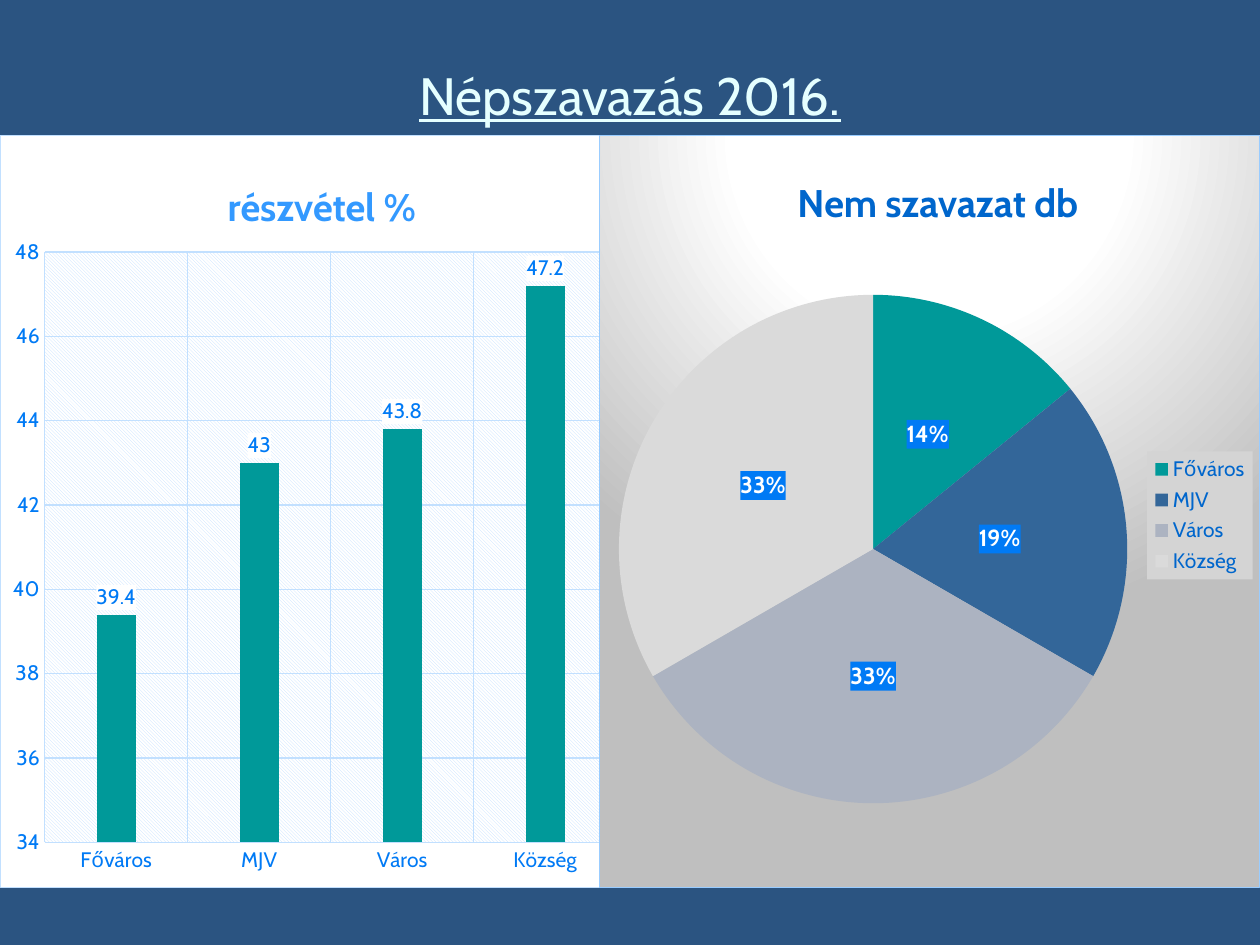
"""Build the referendum slide with a turnout column chart and a pie of No votes."""
from dataclasses import dataclass

from lxml import etree
from pptx import Presentation
from pptx.chart.chart import Chart
from pptx.chart.data import CategoryChartData
from pptx.dml.color import RGBColor
from pptx.enum.chart import XL_CHART_TYPE, XL_LABEL_POSITION, XL_LEGEND_POSITION, XL_TICK_MARK
from pptx.enum.text import MSO_ANCHOR, PP_ALIGN
from pptx.oxml import parse_xml
from pptx.oxml.ns import qn
from pptx.util import Inches, Pt

COLUMN = XL_CHART_TYPE.COLUMN_CLUSTERED
PIE = XL_CHART_TYPE.PIE
OUTSIDE_END = XL_LABEL_POSITION.OUTSIDE_END
CENTER = XL_LABEL_POSITION.CENTER
NO_TICK = XL_TICK_MARK.NONE
FONT = "Cabin"
TITLE_ONLY = 5
SETTLEMENTS = ["Főváros", "MJV", "Város", "Község"]
PALE_BLUE = "C2E0FF"
BRIGHT_BLUE = "007AF5"
SLICE_COLORS = ["009999", "336699", "ACB3C1", "DADADA"]
NAMESPACES = (
    'xmlns:c="http://schemas.openxmlformats.org/drawingml/2006/chart" '
    'xmlns:a="http://schemas.openxmlformats.org/drawingml/2006/main"'
)


def rgb(color: str) -> RGBColor:
    """Turn a hex string into a colour."""
    return RGBColor.from_string(color)


def solid(color: str) -> str:
    """Return the XML of a solid fill."""
    return f'<a:solidFill><a:srgbClr val="{color}"/></a:solidFill>'


HATCH = (
    f'<a:pattFill prst="ltDnDiag"><a:fgClr><a:srgbClr val="{PALE_BLUE}"/></a:fgClr>'
    '<a:bgClr><a:srgbClr val="FFFFFF"/></a:bgClr></a:pattFill>'
)
SPOTLIGHT = (
    "<a:gradFill><a:gsLst>"
    + "".join(
        f'<a:gs pos="{stop * 1000}"><a:srgbClr val="{color}"/></a:gs>'
        for stop, color in [(0, "FFFFFF"), (39, "FFFFFF"), (100, "BFBFBF")]
    )
    + '</a:gsLst><a:path path="circle">'
    '<a:fillToRect l="50000" t="-80000" r="50000" b="180000"/></a:path></a:gradFill>'
)


@dataclass
class ChartPanel:
    """One chart with its place, data and colours."""

    kind: XL_CHART_TYPE
    left: float
    width: float
    values: list[float]
    title: str
    title_color: str
    title_place: tuple[float, ...]
    plot_place: tuple[float, ...]
    background: str
    border: str
    label_format: dict
    label_color: str
    label_background: str
    label_position: XL_LABEL_POSITION


PANELS = [
    ChartPanel(COLUMN, 0, 5, [39.4, 43, 43.8, 47.2], "részvétel %", "3399FF",
               (0.35, 0.05), (0.07, 0.155, 0.91, 0.785), solid("FFFFFF"), PALE_BLUE,
               {"size": Pt(12), "bold": False}, BRIGHT_BLUE, "FFFFFF", OUTSIDE_END),
    ChartPanel(PIE, 4.75, 5.25, [14, 19, 33, 33], "Nem szavazat db", "0066CC",
               (0.29, 0.045), (0.03, 0.21, 0.77, 0.68), SPOTLIGHT, "99CCFF",
               {"size": Pt(13.3), "bold": True}, "FFFFFF", BRIGHT_BLUE, CENTER),
]


def set_font(font, color: str, **formats) -> None:
    """Apply typeface, colour and other format values."""
    font.color.rgb = rgb(color)
    for attribute, value in {"name": FONT, **formats}.items():
        setattr(font, attribute, value)


def shape_properties(fill: str, border: str = "") -> etree._Element:
    """Make the fill and border element of a chart part."""
    line = f'<a:ln w="9525">{solid(border)}</a:ln>' if border else "<a:ln><a:noFill/></a:ln>"
    return parse_xml(f"<c:spPr {NAMESPACES}>{fill}{line}</c:spPr>")


def place(part: etree._Element, index: int, fractions: tuple[float, ...], inner: bool = False) -> None:
    """Give a chart part a manual place in fractions of the chart."""
    for layout in part.findall(qn("c:layout")):
        part.remove(layout)
    target = '<c:layoutTarget val="inner"/>' if inner else ""
    modes = '<c:xMode val="edge"/><c:yMode val="edge"/>'
    sizes = "".join(f'<c:{key} val="{value}"/>' for key, value in zip("xywh", fractions))
    part.insert(index, parse_xml(
        f"<c:layout {NAMESPACES}><c:manualLayout>{target}{modes}{sizes}</c:manualLayout></c:layout>"
    ))


def style_columns(chart: Chart) -> None:
    """Format the axes, grid and columns."""
    plot = chart.plots[0]
    plot.gap_width, plot.overlap = 267, -43
    columns = plot.series[0].format.fill
    columns.solid()
    columns.fore_color.rgb = rgb(SLICE_COLORS[0])
    scale = {"minimum_scale": 34, "maximum_scale": 48, "major_unit": 2}
    for attribute, value in scale.items():
        setattr(chart.value_axis, attribute, value)
    for axis in (chart.category_axis, chart.value_axis):
        axis.major_tick_mark = axis.minor_tick_mark = NO_TICK
        axis.has_major_gridlines = True
        set_font(axis.tick_labels.font, BRIGHT_BLUE, size=Pt(12))
        for line in (axis.format.line, axis.major_gridlines.format.line):
            line.color.rgb = rgb(PALE_BLUE)
            line.width = Pt(0.75)
    chart.value_axis.format.line.fill.background()
    chart.plots[0].series[0].invert_if_negative = False
    chart._chartSpace.chart.plotArea.append(shape_properties(HATCH))


def style_pie(chart: Chart) -> None:
    """Colour the slices and format the legend."""
    for index, color in enumerate(SLICE_COLORS):
        slice_fill = chart.plots[0].series[0].points[index].format.fill
        slice_fill.solid()
        slice_fill.fore_color.rgb = rgb(color)
    chart.has_legend = True
    legend = chart.legend
    legend.position = XL_LEGEND_POSITION.RIGHT
    legend.include_in_layout = False
    set_font(legend.font, "0066CC", size=Pt(12))
    legend_part = chart._chartSpace.chart.find(qn("c:legend"))
    place(legend_part, 1, (0.83, 0.42, 0.16, 0.17))
    legend_part.find(qn("c:txPr")).addprevious(shape_properties(solid("D4D4D4")))


def add_panel(slide, panel: ChartPanel) -> None:
    """Draw one chart panel on the slide."""
    data = CategoryChartData()
    data.categories = SETTLEMENTS
    data.add_series("Series 1", panel.values)
    chart = slide.shapes.add_chart(
        panel.kind, Inches(panel.left), Inches(1.07), Inches(panel.width), Inches(5.98), data
    ).chart
    set_font(chart.font, "FFFFFF", size=Pt(10))
    chart.has_legend = False
    chart.has_title = True
    heading = chart.chart_title.text_frame
    heading.text = panel.title
    set_font(heading.paragraphs[0].runs[0].font, panel.title_color, size=Pt(22), bold=True)
    chart.chart_title.include_in_layout = False

    plot = chart.plots[0]
    plot.vary_by_categories = panel.kind == PIE
    labels = plot.series[0].data_labels
    labels.show_value = panel.kind == COLUMN
    labels.show_percentage = panel.kind == PIE
    labels.number_format = "0%" if panel.kind == PIE else "General"
    labels.number_format_is_linked = False
    labels.position = panel.label_position
    set_font(labels.font, panel.label_color, **panel.label_format)
    label_text = plot.series[0]._element.find(qn("c:dLbls")).find(qn("c:txPr"))
    label_text.addprevious(shape_properties(solid(panel.label_background)))

    chart_part = chart._chartSpace.chart
    chart_part.addnext(shape_properties(panel.background, panel.border))
    place(chart_part.find(qn("c:title")), 1, panel.title_place)
    place(chart_part.plotArea, 0, panel.plot_place, inner=True)
    if panel.kind == COLUMN:
        style_columns(chart)
    else:
        style_pie(chart)


def main() -> None:
    """Build and save the slide."""
    deck = Presentation()
    deck.slide_width, deck.slide_height = Inches(10), Inches(7.5)
    slide = deck.slides.add_slide(deck.slide_layouts[TITLE_ONLY])
    slide.background.fill.solid()
    slide.background.fill.fore_color.rgb = rgb("2B5481")
    title = slide.shapes.title
    bounds = {"left": 0.5, "top": 0.42, "width": 9, "height": 0.66}
    for attribute, inches in bounds.items():
        setattr(title, attribute, Inches(inches))
    title.text_frame.text = "Népszavazás 2016."
    title.text_frame.vertical_anchor = MSO_ANCHOR.MIDDLE
    title_line = title.text_frame.paragraphs[0]
    title_line.alignment = PP_ALIGN.CENTER
    set_font(title_line.runs[0].font, "E5FFFF", size=Pt(30), underline=True)
    for panel in PANELS:
        add_panel(slide, panel)
    deck.save("out.pptx")


if __name__ == "__main__":
    main()
